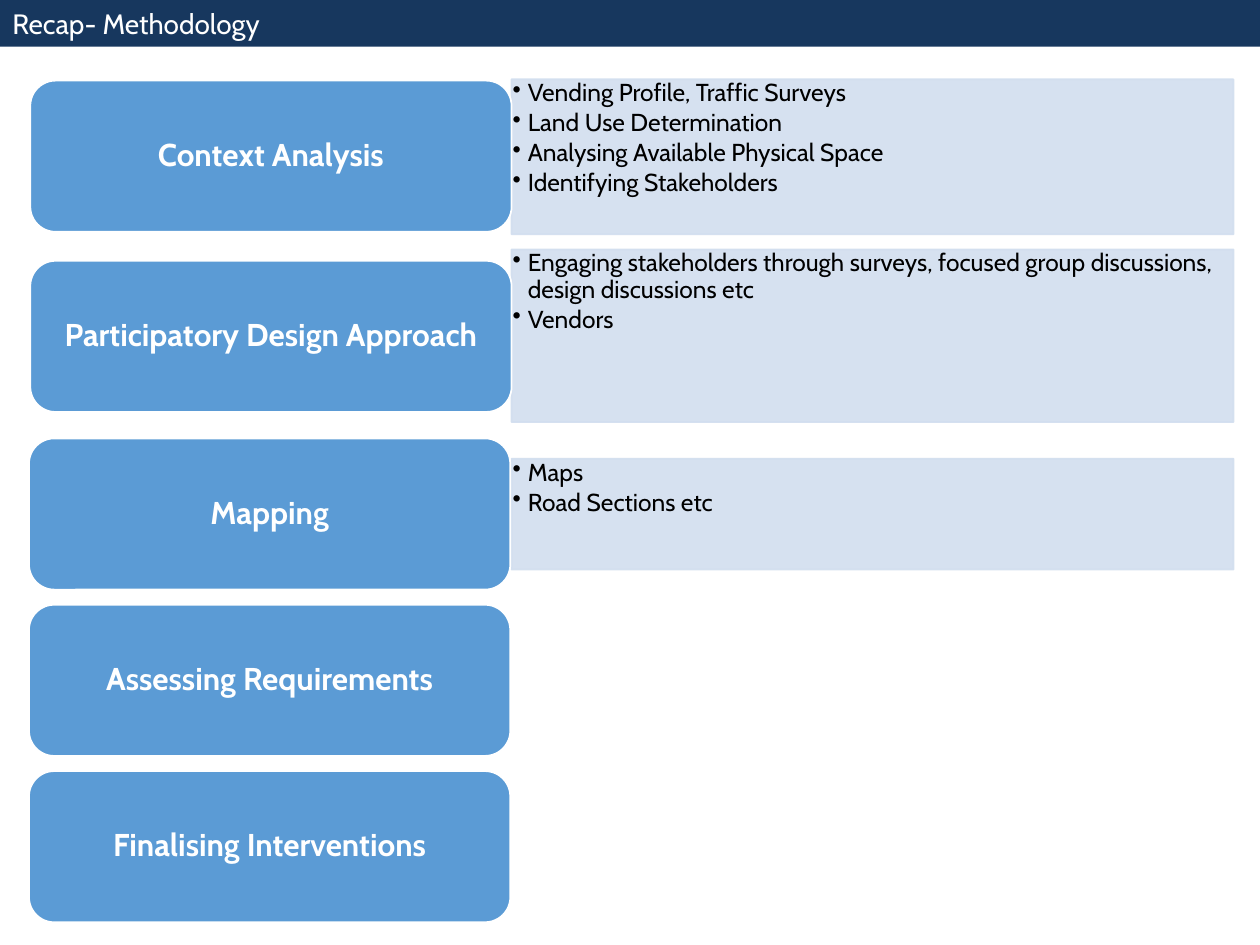
import pptx
import pptx.dml.color
import pptx.enum.shapes
import pptx.enum.text
import pptx.oxml
import pptx.oxml.ns
import pptx.util
from lxml import etree

Inches = pptx.util.Inches
Pt = pptx.util.Pt
RGBColor = pptx.dml.color.RGBColor
SHAPES = pptx.enum.shapes.MSO_SHAPE
ANCHOR = pptx.enum.text.MSO_ANCHOR
ALIGN = pptx.enum.text.PP_ALIGN
qn = pptx.oxml.ns.qn

NAVY = RGBColor(0x17, 0x37, 0x5E)
BLUE = RGBColor(0x5B, 0x9B, 0xD5)
PALE = RGBColor(0xD2, 0xDE, 0xEF)
WHITE = RGBColor(0xFF, 0xFF, 0xFF)
BLACK = RGBColor(0, 0, 0)

STEP_WIDTH, STEP_HEIGHT = 3.82, 1.2
DETAIL_LEFT, DETAIL_WIDTH = 4.06, 5.73

STEPS = [
    ("Context Analysis", 0.24, 0.64, 0.63, 1.23,
     ["Vending Profile, Traffic Surveys", "Land Use Determination",
      "Analysing Available Physical Space", "Identifying Stakeholders"]),
    ("Participatory Design Approach", 0.24, 2.07, 1.98, 1.37,
     ["Engaging stakeholders through surveys, focused group discussions, "
      "design discussions etc", "Vendors"]),
    ("Mapping", 0.23, 3.48, 3.64, 0.88, ["Maps", "Road Sections etc"]),
    ("Assessing Requirements", 0.23, 4.8, None, None, []),
    ("Finalising Interventions", 0.23, 6.12, None, None, []),
]


def write(frame, lines, size=14, color=BLACK, bold=False, align=ALIGN.LEFT,
          anchor=ANCHOR.TOP, insets=(0.1, 0.05), spacing=None, after=0,
          bullet=False):
    frame.word_wrap = True
    frame.vertical_anchor = anchor
    frame.margin_left = frame.margin_right = Inches(insets[0])
    frame.margin_top = frame.margin_bottom = Inches(insets[1])
    for index, line in enumerate(lines):
        paragraph = frame.add_paragraph() if index else frame.paragraphs[0]
        if bullet:
            paragraph.level = 1
            properties = paragraph._p.get_or_add_pPr()
            properties.set("marL", str(Inches(0.12)))
            properties.set("indent", str(Inches(-0.12)))
            etree.SubElement(properties, qn("a:buChar"), char="•")
        paragraph.alignment = align
        paragraph.line_spacing = spacing
        paragraph.space_after = Pt(after)
        run = paragraph.add_run()
        run.text = line
        run.font.name = "Cabin"
        run.font.size = Pt(size)
        run.font.bold = bold
        run.font.color.rgb = color


class MethodologySlide:
    def __init__(self, slide):
        self.slide = slide

    def box(self, kind, left, top, width, height, fill, outline=None):
        shape = self.slide.shapes.add_shape(
            kind, Inches(left), Inches(top), Inches(width), Inches(height))
        shape.shadow.inherit = False
        shape.fill.solid()
        shape.fill.fore_color.rgb = fill
        if outline is None:
            shape.line.fill.background()
        else:
            shape.line.color.rgb = outline
            shape.line.width = Pt(1)
        return shape

    def title_bar(self, text):
        bar = self.box(SHAPES.RECTANGLE, 0, 0, 10, 0.37, NAVY)
        write(bar.text_frame, [text], size=16, color=WHITE)
        bar.text_frame.auto_size = pptx.enum.text.MSO_AUTO_SIZE.SHAPE_TO_FIT_TEXT

    def detail(self, top, height, points):
        panel = self.box(SHAPES.RECTANGLE, DETAIL_LEFT, top, DETAIL_WIDTH,
                         height, PALE, PALE)
        for color in panel._element.spPr.iter(qn("a:srgbClr")):
            etree.SubElement(color, qn("a:alpha"), val="90000")
        write(panel.text_frame, points, insets=(0.01, 0.01), spacing=0.9,
              after=2, bullet=True)

    def step(self, left, top, name):
        card = self.box(SHAPES.ROUNDED_RECTANGLE, left, top, STEP_WIDTH,
                        STEP_HEIGHT, BLUE, WHITE)
        write(card.text_frame, [name], size=18, color=WHITE, bold=True,
              align=ALIGN.CENTER, anchor=ANCHOR.MIDDLE, insets=(0.07, 0.04),
              spacing=0.9)


def main():
    deck = pptx.Presentation()
    deck.slide_width, deck.slide_height = Inches(10), Inches(7.5)
    page = MethodologySlide(deck.slides.add_slide(deck.slide_layouts[6]))
    page.title_bar("Recap- Methodology")
    for name, left, top, detail_top, detail_height, points in STEPS:
        if points:
            page.detail(detail_top, detail_height, points)
        page.step(left, top, name)
    deck.save("out.pptx")


if __name__ == "__main__":
    main()
